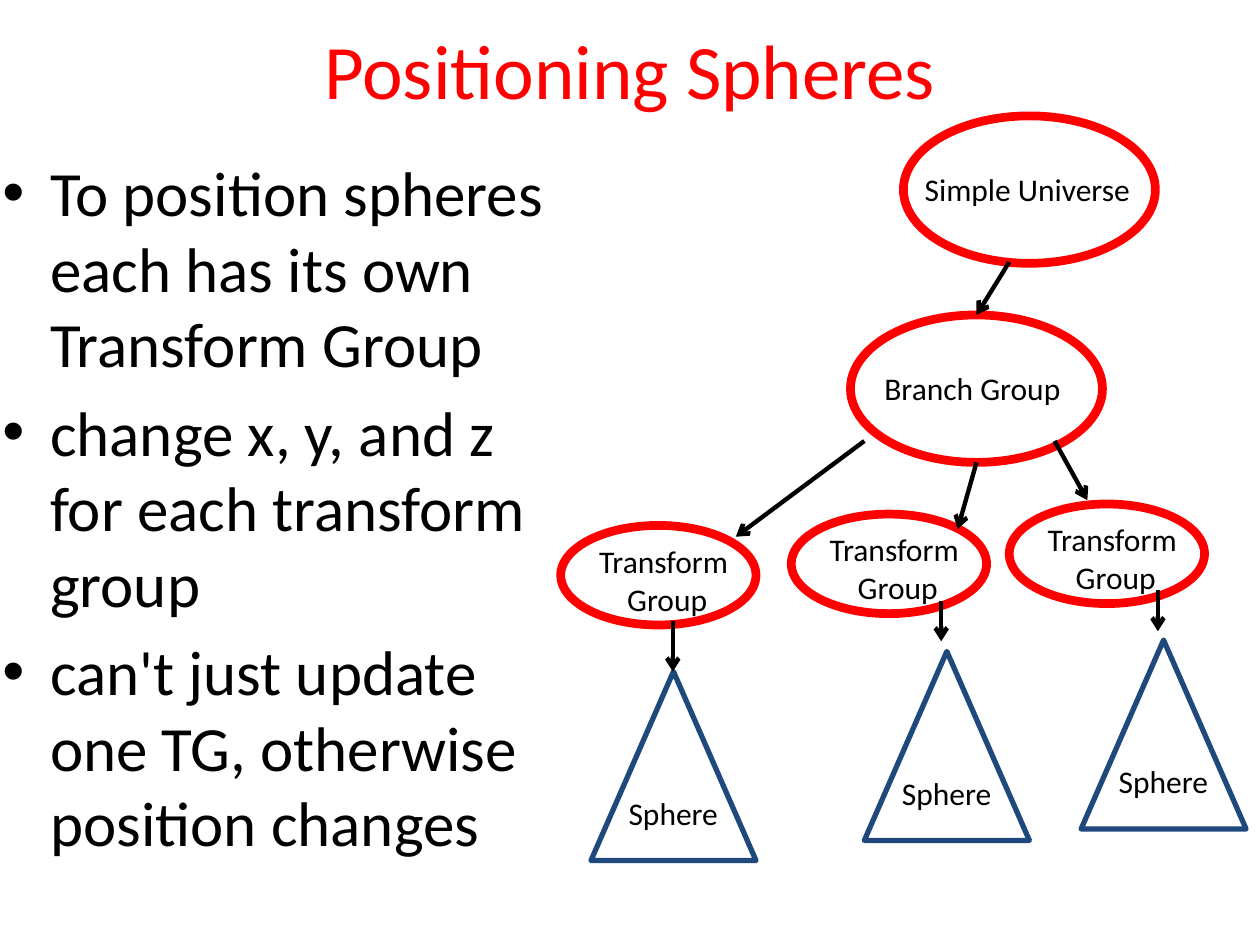
from dataclasses import dataclass

from lxml.etree import SubElement
from pptx import Presentation
from pptx.dml.color import RGBColor
from pptx.enum.shapes import MSO_CONNECTOR, MSO_SHAPE
from pptx.enum.text import MSO_ANCHOR, MSO_AUTO_SIZE, PP_ALIGN
from pptx.oxml.ns import qn
from pptx.util import Inches, Pt

COLORS = {"red": "FF0000", "navy": "1F497D", "black": "000000"}
FONT = "Calibri"


@dataclass
class Group:
    """A large ellipse with a one-line label."""
    label: str
    left: float
    top: float
    label_left: float
    label_width: float


@dataclass
class Branch:
    """A transform group, its sphere and the arrows leading to each."""
    group: tuple[float, float]
    sphere: tuple[float, float]
    arrow_in: tuple[float, float, float, float]
    arrow_out: tuple[float, float, float, float]


GROUPS = [
    Group("Branch Group", 6.75, 2.5, 6.92, 1.62),
    Group("Simple Universe", 7.17, 0.92, 7.24, 1.85),
]
BRANCHES = [
    Branch((8.01, 4), (8.58, 5.08), (8.37, 3.5, 8.63, 3.97), (9.19, 4.68, 9.19, 5.01)),
    Branch((6.28, 4.08), (6.86, 5.17), (7.75, 3.67, 7.6, 4.2), (7.47, 4.77, 7.47, 5.09)),
    Branch((4.45, 4.17), (4.69, 5.33), (6.86, 3.5, 5.84, 4.26), (5.34, 4.93, 5.34, 5.33)),
]
BULLETS = [
    "To position spheres each has its own Transform Group",
    "change x, y, and z for each transform group",
    "can't just update one TG, otherwise position changes",
]


def write_text(paragraph, text: str, size: float = 18, color: str = "black",
               align=PP_ALIGN.LEFT) -> None:
    paragraph.text = text
    paragraph.alignment = align
    for run in paragraph.runs:
        run.font.name = FONT
        run.font.size = Pt(size)
        run.font.color.rgb = RGBColor.from_string(COLORS[color])


def add_label(slide, text: str, left: float, top: float, width: float,
              height: float = 0.4, align=PP_ALIGN.LEFT) -> None:
    box = slide.shapes.add_textbox(*map(Inches, (left, top, width, height)))
    box.text_frame.word_wrap = False
    box.text_frame.auto_size = MSO_AUTO_SIZE.SHAPE_TO_FIT_TEXT
    write_text(box.text_frame.paragraphs[0], text, align=align)


def add_outline(slide, preset, left: float, top: float, width: float,
                height: float, color: str, weight: float) -> None:
    shape = slide.shapes.add_shape(preset, *map(Inches, (left, top, width, height)))
    shape.shadow.inherit = False
    shape.fill.background()
    shape.line.color.rgb = RGBColor.from_string(COLORS[color])
    shape.line.width = Pt(weight)


def add_arrow(slide, ends: tuple[float, float, float, float]) -> None:
    connector = slide.shapes.add_connector(MSO_CONNECTOR.STRAIGHT, *map(Inches, ends))
    connector.line.color.rgb = RGBColor.from_string(COLORS["black"])
    connector.line.width = Pt(2.5)
    SubElement(connector.line._get_or_add_ln(), qn("a:tailEnd"), type="arrow")
    SubElement(connector._element.spPr, qn("a:effectLst"))


def add_title(slide, text: str) -> None:
    title = slide.shapes.title
    title.left, title.top, title.width, title.height = map(Inches, (0.5, -0.08, 9, 1.25))
    title.text_frame.vertical_anchor = MSO_ANCHOR.MIDDLE
    write_text(title.text_frame.paragraphs[0], text, size=44, color="red",
               align=PP_ALIGN.CENTER)


def add_bullets(slide, texts: list[str]) -> None:
    box = slide.shapes.add_textbox(*map(Inches, (-0.08, 1.17, 4.67, 5.75)))
    frame = box.text_frame
    frame.word_wrap = True
    for index, text in enumerate(texts):
        paragraph = frame.add_paragraph() if index else frame.paragraphs[0]
        write_text(paragraph, text, size=36)
        paragraph.space_before = Pt(7.2)
        properties = paragraph._p.get_or_add_pPr()
        properties.set("marL", str(Inches(0.38)))
        properties.set("indent", str(Inches(-0.38)))
        SubElement(properties, qn("a:buFont"), typeface="Arial")
        SubElement(properties, qn("a:buChar"), char="•")


def add_group(slide, group: Group) -> None:
    add_outline(slide, MSO_SHAPE.OVAL, group.left, group.top, 2, 1.17, "red", 5)
    add_label(slide, group.label, group.label_left, group.top + 0.38, group.label_width)


def add_branch(slide, branch: Branch) -> None:
    left, top = branch.group
    add_outline(slide, MSO_SHAPE.OVAL, left, top, 1.55, 0.79, "red", 5)
    add_label(slide, "Transform \vGroup", left + 0.2, top + 0.08, 1.29, 0.71,
              align=PP_ALIGN.CENTER)
    left, top = branch.sphere
    add_outline(slide, MSO_SHAPE.ISOSCELES_TRIANGLE, left, top, 1.31, 1.5, "navy", 3)
    add_label(slide, "Sphere", left + 0.2, top + 0.92, 0.92)
    add_arrow(slide, branch.arrow_in)
    add_arrow(slide, branch.arrow_out)


def main() -> None:
    presentation = Presentation()
    presentation.slide_width, presentation.slide_height = Inches(10), Inches(7.5)
    slide = presentation.slides.add_slide(presentation.slide_layouts[5])
    add_title(slide, "Positioning Spheres")
    add_bullets(slide, BULLETS)
    for group in GROUPS:
        add_group(slide, group)
    add_arrow(slide, (8.01, 2.08, 7.75, 2.5))
    for branch in BRANCHES:
        add_branch(slide, branch)
    presentation.save("out.pptx")


if __name__ == "__main__":
    main()
